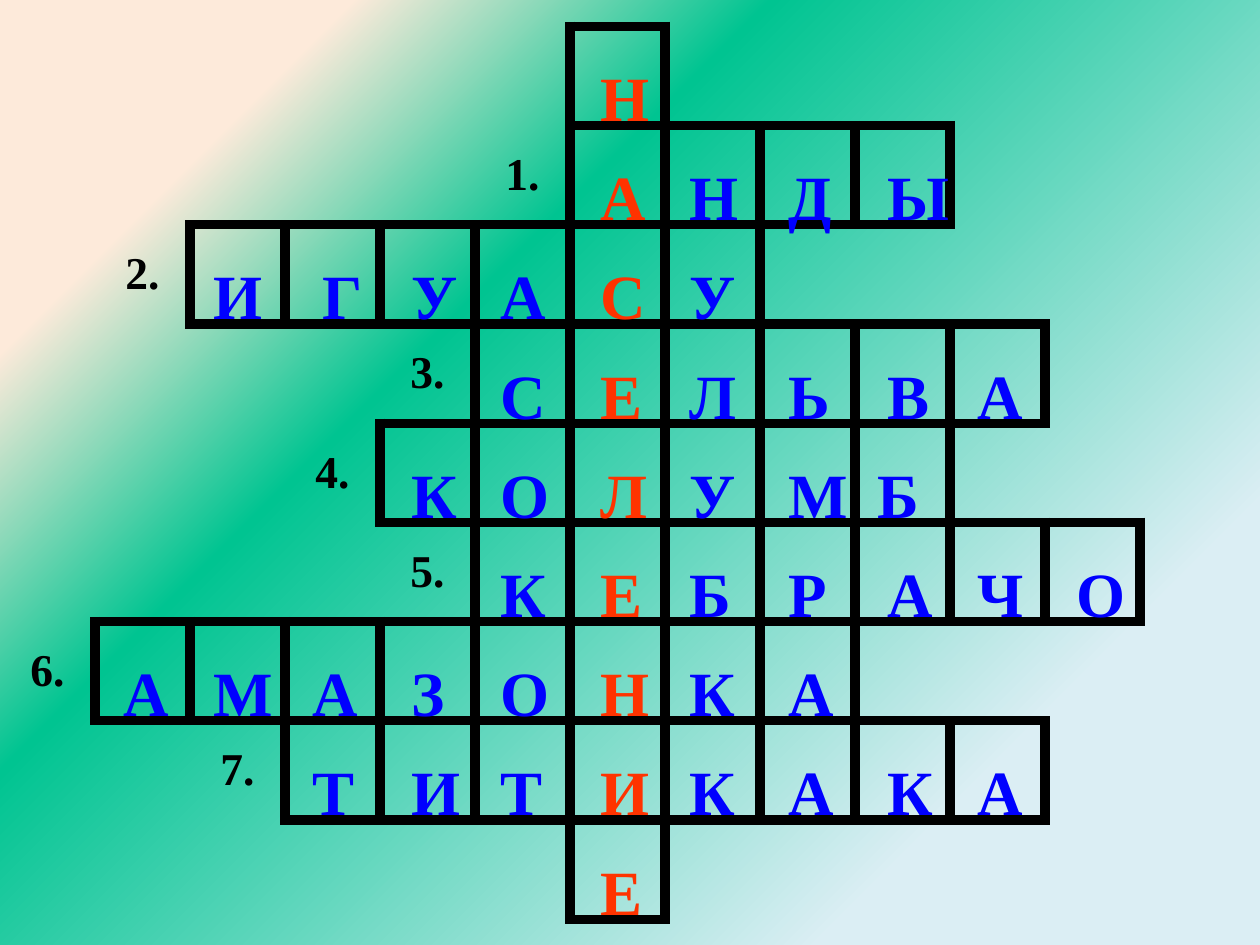
from dataclasses import dataclass

from pptx import Presentation
from pptx.dml.color import RGBColor
from pptx.enum.text import MSO_ANCHOR, PP_ALIGN
from pptx.oxml import parse_xml
from pptx.oxml.ns import nsdecls
from pptx.util import Cm, Pt

MIDDLE = MSO_ANCHOR.MIDDLE
TOP = MSO_ANCHOR.TOP
CENTER = PP_ALIGN.CENTER


@dataclass(frozen=True)
class Theme:
    font: str = "Times New Roman"
    black: str = "000000"
    answer: str = "0000FF"
    keyword: str = "FF3300"
    sky: str = "DBEEF4"
    green: str = "00C491"
    peach: str = "FDEADA"
    number_size: int = 26
    letter_size: int = 36
    border: int = 6


theme = Theme()


def style(para, size, color):
    font = para.font
    font.name = theme.font
    font.size = Pt(size)
    font.bold = True
    font.color.rgb = RGBColor.from_string(color)


def border_line(side, visible):
    fill = (f'<a:solidFill><a:srgbClr val="{theme.black}"/></a:solidFill>'
            if visible else "<a:noFill/>")
    width = Pt(theme.border) if visible else 0
    return parse_xml(f'<a:ln{side} {nsdecls("a")} w="{width}">{fill}</a:ln{side}>')


# Crossword: first column and word of each row
WORDS = [
    (6, "Н"), (6, "АНДЫ"), (2, "ИГУАСУ"), (5, "СЕЛЬВА"), (4, "КОЛУМБ"),
    (5, "КЕБРАЧО"), (1, "АМАЗОНКА"), (3, "ТИТИКАКА"), (6, "Е"),
]
COLUMNS = 13
KEY_COLUMN = 6
LETTER_LEFTS = [None, 2.3, 4.1, 6.1, 8.1, 9.9, 11.9, 13.7, 15.7, 17.7, 19.5, 21.5]
NUDGES = {(2, 3): 0.2, (4, 9): -0.2}
ROW_HEIGHT = 2
letters = {(row, start + index): letter
           for row, (start, word) in enumerate(WORDS)
           for index, letter in enumerate(word)}

deck = Presentation()
deck.slide_width = Cm(25.4)
deck.slide_height = Cm(19.05)
page = deck.slides.add_slide(deck.slide_layouts[6])

# Gradient background
page.element.cSld.insert(0, parse_xml(f"""
<p:bg {nsdecls("p", "a")}><p:bgPr><a:gradFill><a:gsLst>
  <a:gs pos="20000"><a:srgbClr val="{theme.sky}"/></a:gs>
  <a:gs pos="65000"><a:srgbClr val="{theme.green}"><a:alpha val="32000"/></a:srgbClr></a:gs>
  <a:gs pos="84000"><a:srgbClr val="{theme.peach}"/></a:gs>
</a:gsLst><a:path path="circle"><a:fillToRect l="100000" t="100000"/></a:path>
</a:gradFill><a:effectLst/></p:bgPr></p:bg>"""))

# Crossword grid
grid = page.shapes.add_table(len(WORDS), COLUMNS, Cm(0), Cm(0.53),
                             Cm(24.9), Cm(ROW_HEIGHT * len(WORDS))).table
grid.first_row = False
grid.horz_banding = False
for row in range(len(WORDS)):
    for column in range(COLUMNS):
        cell = grid.cell(row, column)
        cell.fill.background()
        neighbours = {"L": (row, column - 1), "R": (row, column + 1),
                      "T": (row - 1, column), "B": (row + 1, column)}
        properties = cell._tc.get_or_add_tcPr()
        for index, (side, neighbour) in enumerate(neighbours.items()):
            visible = (row, column) in letters or neighbour in letters
            properties.insert(index, border_line(side, visible))

# Question numbers, left of each word
for row in range(1, len(WORDS) - 1):
    cell = grid.cell(row, WORDS[row][0] - 1)
    cell.vertical_anchor = MIDDLE
    para = cell.text_frame.paragraphs[0]
    para.text = f"{row}."
    para.alignment = CENTER
    style(para, theme.number_size, theme.black)

# Letters
for (row, column), letter in letters.items():
    left = LETTER_LEFTS[column] + NUDGES.get((row, column), 0)
    box = page.shapes.add_textbox(Cm(left), Cm(0.91 + ROW_HEIGHT * row),
                                  Cm(1.17), Cm(1.25))
    frame = box.text_frame
    frame.word_wrap = True
    frame.vertical_anchor = TOP
    frame.margin_left, frame.margin_top = Cm(0.2), Cm(0.27)
    frame.margin_right = frame.margin_bottom = 0
    para = frame.paragraphs[0]
    para.text = letter
    style(para, theme.letter_size,
          theme.keyword if column == KEY_COLUMN else theme.answer)

deck.save("out.pptx")
